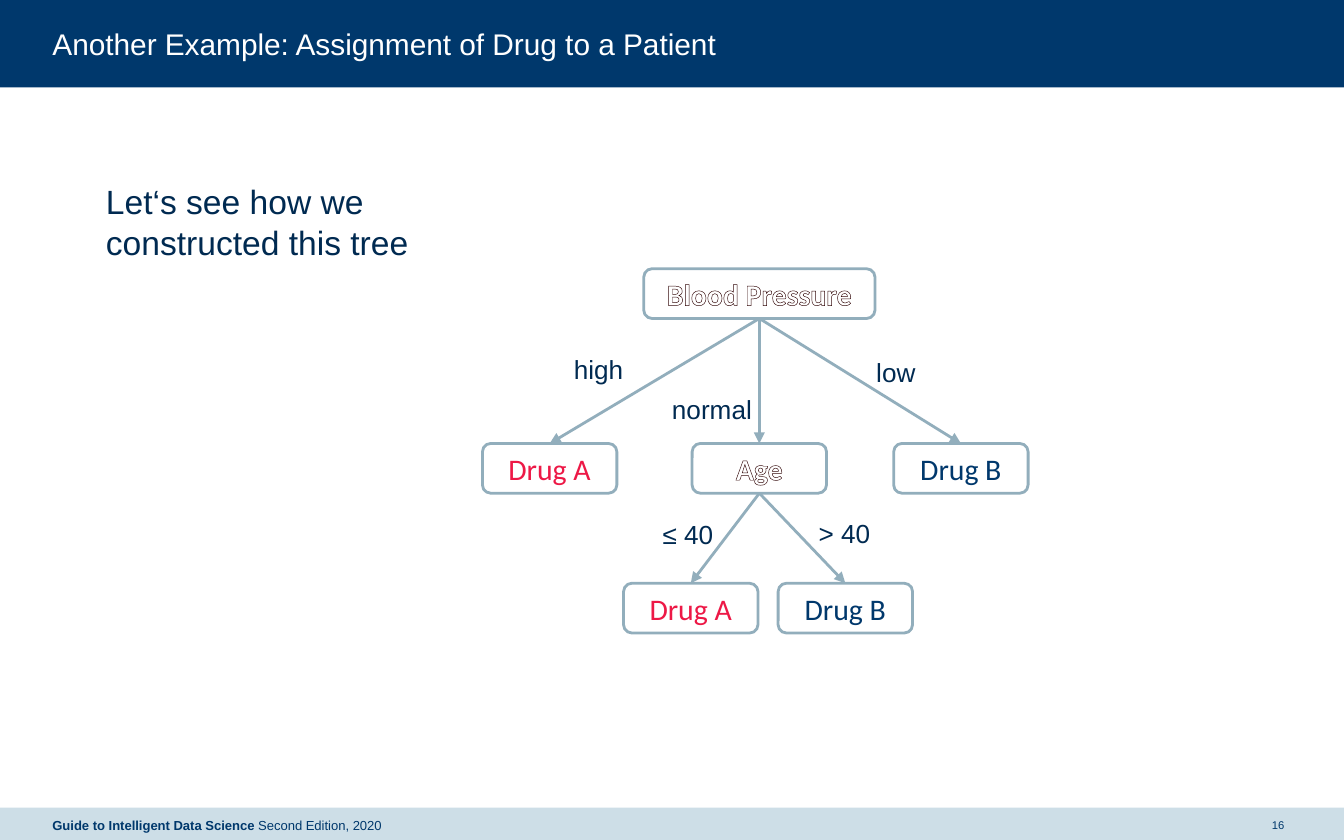
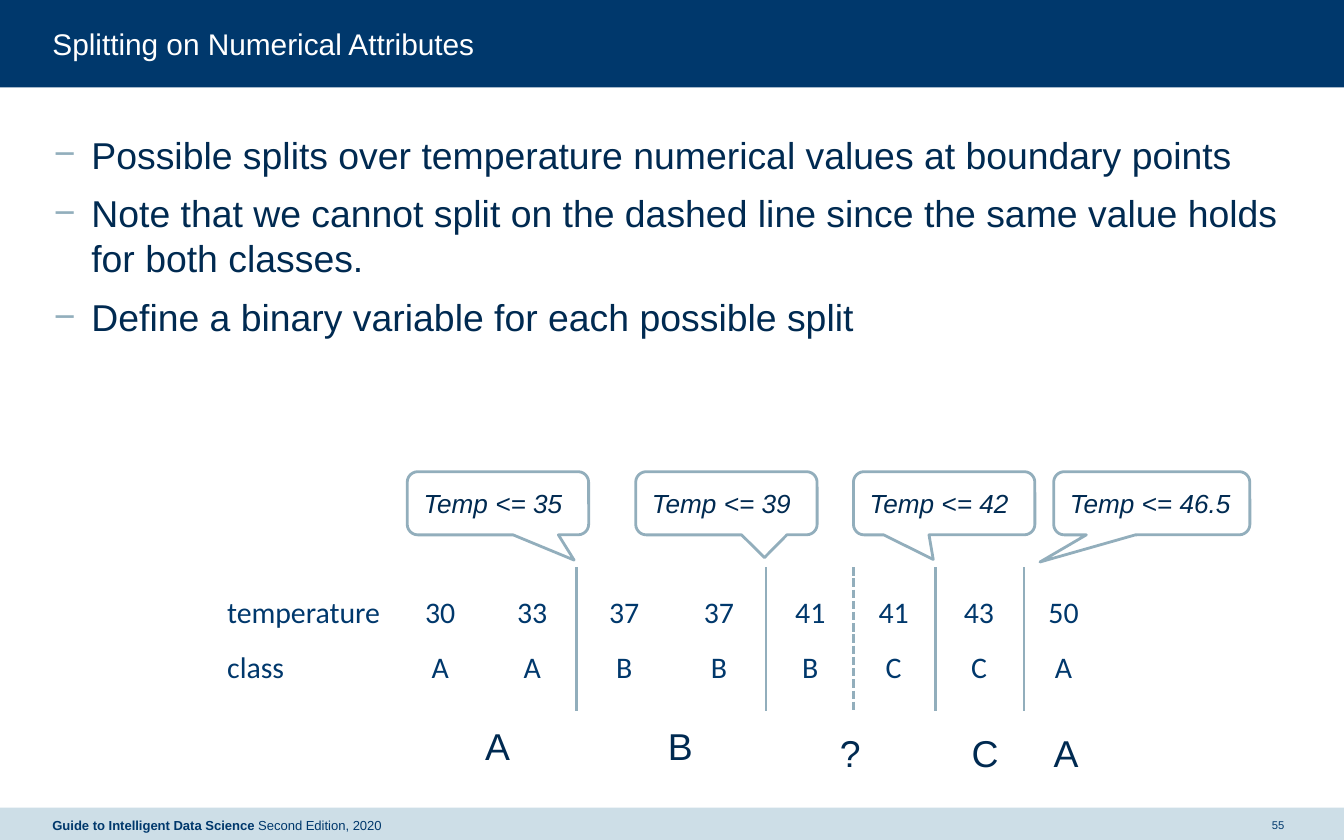
"""Build two slides on decision trees and splits on numerical attributes."""
from lxml import etree
from pptx import Presentation
from pptx.dml.color import RGBColor
from pptx.enum.dml import MSO_LINE
from pptx.enum.shapes import MSO_CONNECTOR, MSO_SHAPE
from pptx.enum.text import MSO_ANCHOR, MSO_AUTO_SIZE, PP_ALIGN
from pptx.oxml.ns import qn
from pptx.util import Inches, Pt

COLORS = {"navy": "00386C", "ink": "002A51", "steel": "92AEBC", "pale": "CDDEE7",
          "red": "ED1846", "white": "FFFFFF", "outline": "340A0B"}
TOP, MIDDLE = MSO_ANCHOR.TOP, MSO_ANCHOR.MIDDLE
LEFT, CENTER = PP_ALIGN.LEFT, PP_ALIGN.CENTER
FIT_SHAPE = MSO_AUTO_SIZE.SHAPE_TO_FIT_TEXT
RECTANGLE, ROUNDED = MSO_SHAPE.RECTANGLE, MSO_SHAPE.ROUNDED_RECTANGLE
CALLOUT = MSO_SHAPE.ROUNDED_RECTANGULAR_CALLOUT
STRAIGHT, DASHED = MSO_CONNECTOR.STRAIGHT, MSO_LINE.SQUARE_DOT
BOTTOM_SIDE, TOP_SIDE = 2, 0


def rgb(name):
    return RGBColor.from_string(COLORS[name])


class Deck:
    """Holds the shared style and the current slide."""

    def __init__(self):
        self.presentation = Presentation()
        self.presentation.slide_width = Inches(10)
        self.presentation.slide_height = Inches(6.25)
        self.slide = None

    def add_slide(self, title, number):
        self.slide = self.presentation.slides.add_slide(self.presentation.slide_layouts[6])
        self.shape(RECTANGLE, 0, 0, 10, 0.65, fill="navy")
        self.shape(RECTANGLE, 0, 6.01, 10, 0.26, fill="pale")
        footer = self.text("Guide to Intelligent Data Science ", 0.39, 6.01, 4.39, 0.26,
                           size=7, color="navy", anchor=MIDDLE)
        paragraph = footer.text_frame.paragraphs[0]
        paragraph.runs[0].font.bold = True
        paragraph.add_run().text = "Second Edition, 2020"
        self.text(title, 0.39, 0.19, 9.22, 0.27, size=16, color="white")
        self.text(number, 9.41, 6.01, 0.2, 0.26, size=6, color="navy",
                  align=CENTER, anchor=MIDDLE)

    def style(self, paragraph, size, color="ink", font="Arial", align=LEFT):
        paragraph.alignment = align
        paragraph.font.size = Pt(size)
        paragraph.font.name = font
        paragraph.font.color.rgb = rgb(color)

    def shape(self, kind, left, top, width, height, fill=None, line=None):
        shape = self.slide.shapes.add_shape(
            kind, Inches(left), Inches(top), Inches(width), Inches(height))
        shape.shadow.inherit = False
        if fill:
            shape.fill.solid()
            shape.fill.fore_color.rgb = rgb(fill)
        else:
            shape.fill.background()
        if line:
            shape.line.color.rgb = rgb(line)
            shape.line.width = Pt(1.5)
        else:
            shape.line.fill.background()
        return shape

    def text(self, text, left, top, width, height, size, color="ink", align=LEFT,
             anchor=TOP, margin=0):
        box = self.slide.shapes.add_textbox(
            Inches(left), Inches(top), Inches(width), Inches(height))
        frame = box.text_frame
        frame.word_wrap = True
        frame.vertical_anchor = anchor
        frame.margin_left = frame.margin_right = Inches(margin)
        frame.margin_top = frame.margin_bottom = Inches(margin / 2)
        frame.text = text
        for paragraph in frame.paragraphs:
            self.style(paragraph, size, color, align=align)
        return box

    def label(self, text, left, top, width, height, size):
        box = self.text(text, left, top, width, height, size)
        box.text_frame.word_wrap = False
        box.text_frame.auto_size = FIT_SHAPE
        box.fill.solid()
        box.fill.fore_color.rgb = rgb("white")

    def bullets(self, items, left, top, width, height):
        box = self.text("\n".join(items), left, top, width, height, size=20)
        for paragraph in box.text_frame.paragraphs:
            properties = paragraph._p.get_or_add_pPr()
            properties.set("marL", str(Inches(0.29)))
            properties.set("indent", str(Inches(-0.28)))
            bullet_color = etree.Element(qn("a:buClr"))
            etree.SubElement(bullet_color, qn("a:srgbClr"), val=COLORS["steel"])
            bullet_font = etree.Element(qn("a:buFont"), typeface="Arial")
            bullet = etree.Element(qn("a:buChar"), char="−")
            for index, element in enumerate((bullet_color, bullet_font, bullet)):
                properties.insert(index, element)
            paragraph.space_before = Pt(7.5)

    def node(self, text, center, top, width=1, color="navy", outlined=False):
        shape = self.shape(ROUNDED, center - width / 2, top, width, 0.37, line="steel")
        shape.text_frame.vertical_anchor = MIDDLE
        shape.text_frame.text = text
        paragraph = shape.text_frame.paragraphs[0]
        self.style(paragraph, 16, "white" if outlined else color, "Calibri", CENTER)
        if outlined:
            paragraph.font.bold = True
            outline = etree.Element(qn("a:ln"), w=str(Pt(0.8)))
            fill = etree.SubElement(outline, qn("a:solidFill"))
            etree.SubElement(fill, qn("a:srgbClr"), val=COLORS["outline"])
            paragraph.runs[0]._r.get_or_add_rPr().insert(0, outline)
        return shape

    def line(self, x1=0, y1=0, x2=0, y2=0, dash=None):
        connector = self.slide.shapes.add_connector(
            STRAIGHT, Inches(x1), Inches(y1), Inches(x2), Inches(y2))
        connector.line.color.rgb = rgb("steel")
        connector.line.width = Pt(1.5)
        if dash:
            connector.line.dash_style = dash
        etree.SubElement(connector._element.spPr, qn("a:effectLst"))
        return connector

    def branch(self, parent, child):
        connector = self.line()
        connector.begin_connect(parent, BOTTOM_SIDE)
        connector.end_connect(child, TOP_SIDE)
        etree.SubElement(connector.line._get_or_add_ln(), qn("a:tailEnd"), type="triangle")

    def callout(self, text, left, width, tip):
        shape = self.shape(CALLOUT, left, 3.51, width, 0.47, line="steel")
        for index, value in enumerate(tip):
            shape.adjustments[index] = value
        shape.text_frame.vertical_anchor = MIDDLE
        shape.text_frame.text = text
        paragraph = shape.text_frame.paragraphs[0]
        self.style(paragraph, 14)
        paragraph.font.italic = True
        paragraph.space_before = Pt(3.8)

    def table(self, rows, left, top, widths, row_height):
        table = self.slide.shapes.add_table(
            len(rows), len(widths), Inches(left), Inches(top),
            Inches(sum(widths)), Inches(row_height * len(rows))).table
        table.first_row = table.horz_banding = False
        for column, width in zip(table.columns, widths):
            column.width = Inches(width)
        for row_index, row in enumerate(rows):
            for column_index, value in enumerate(row):
                cell = table.cell(row_index, column_index)
                cell.fill.background()
                cell.text = value
                self.style(cell.text_frame.paragraphs[0], 16, "navy", "Calibri",
                           CENTER if column_index else LEFT)


def build_tree_slide(deck):
    deck.add_slide("Another Example: Assignment of Drug to a Patient", "16")
    deck.text("Let‘s see how we constructed this tree", 0.69, 1.3, 3, 0.71,
              size=18, margin=0.1)
    pressure = deck.node("Blood Pressure", 5.65, 2, width=1.72, outlined=True)
    age = deck.node("Age", 5.65, 3.3, outlined=True)
    high_drug = deck.node("Drug A", 4.09, 3.3, color="red")
    low_drug = deck.node("Drug B", 7.15, 3.3)
    young_drug = deck.node("Drug A", 5.14, 4.34, color="red")
    old_drug = deck.node("Drug B", 6.29, 4.34)
    for parent, children in ((pressure, (age, high_drug, low_drug)),
                             (age, (young_drug, old_drug))):
        for child in children:
            deck.branch(parent, child)
    for text, left, top, width in (
            ("high", 4.27, 2.63, 0.37), ("normal", 5, 2.93, 0.6), ("low", 6.52, 2.65, 0.3),
            ("≤ 40", 4.93, 3.86, 0.38), ("> 40", 6.09, 3.85, 0.39)):
        deck.label(text, left, top, width, 0.24, size=14)


def build_split_slide(deck):
    deck.add_slide("Splitting on Numerical Attributes", "55")
    deck.bullets((
        "Possible splits over temperature numerical values at boundary points",
        "Note that we cannot split on the dashed line since the same value holds "
        "for both classes.",
        "Define a binary variable for each possible split"), 0.39, 0.98, 9.16, 2.41)
    deck.table((("temperature", "30", "33", "37", "37", "41", "41", "43", "50"),
                ("class", *"AABBBCCA")), 1.59, 4.38,
               (1.35, 0.67, 0.7, 0.67, 0.74, 0.62, 0.62, 0.65, 0.61), 0.41)
    for x, dash in ((4.29, None), (5.7, None), (6.35, DASHED), (6.96, None), (7.62, None)):
        deck.line(x, 4.22, x, 5.29, dash)
    for text, left, top, width in (
            ("A", 3.61, 5.38, 0.19), ("B", 4.97, 5.38, 0.19), ("?", 6.25, 5.43, 0.16),
            ("C", 7.23, 5.43, 0.2), ("A", 7.84, 5.43, 0.19)):
        deck.label(text, left, top, width, 0.34, size=20)
    for limit, left, width, tip in (
            ("35", 3.03, 1.35, (0.42, 0.9)), ("39", 4.73, 1.35, (0.21, 0.86)),
            ("42", 6.35, 1.35, (-0.06, 0.89)), ("46.5", 7.84, 1.46, (-0.57, 0.93))):
        deck.callout(f"Temp <= {limit}", left, width, tip)


def main():
    deck = Deck()
    build_tree_slide(deck)
    build_split_slide(deck)
    deck.presentation.save("out.pptx")


if __name__ == "__main__":
    main()
